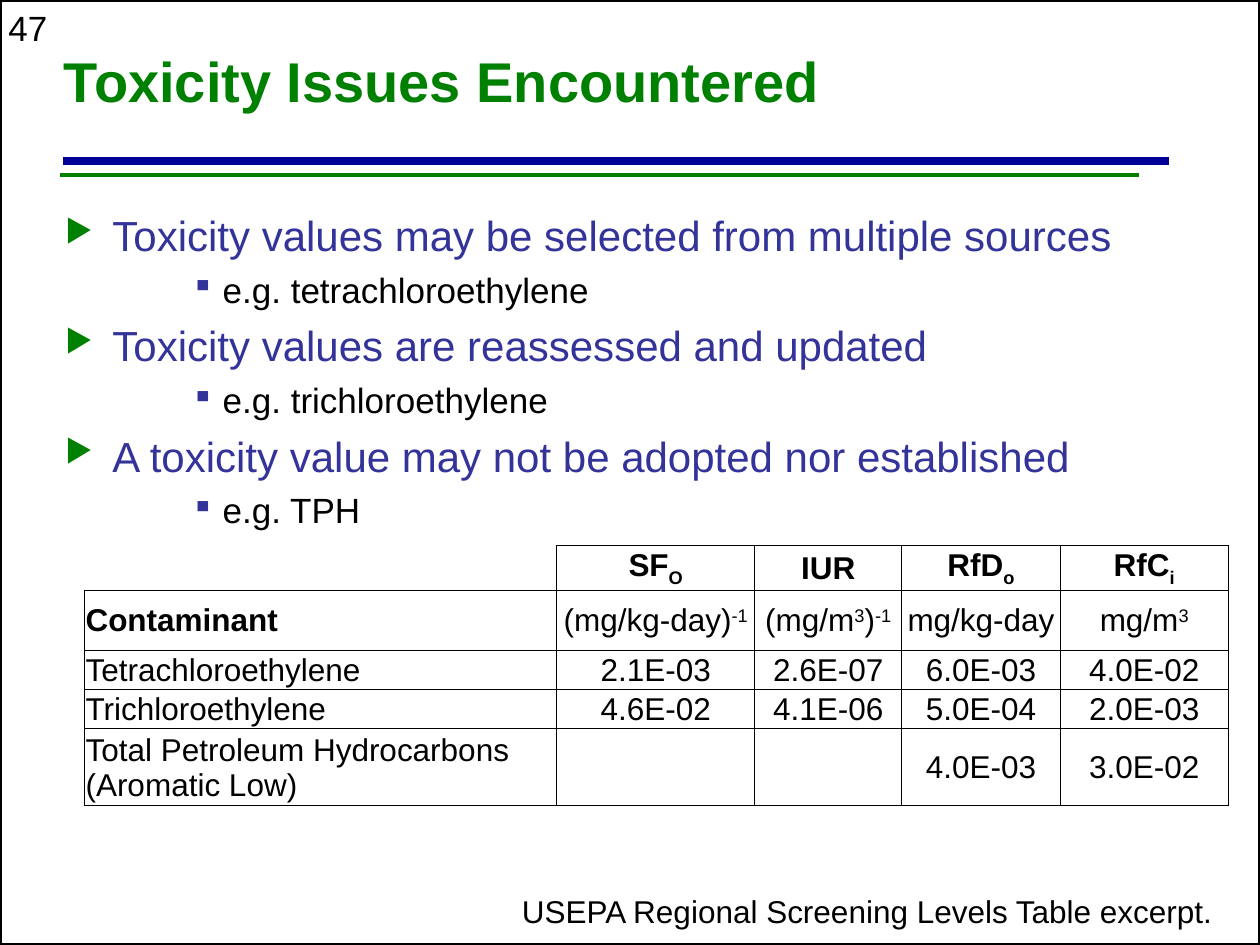
"""Build the slide on toxicity values, with its bullets and screening level table."""
from lxml.etree import SubElement
from pptx import Presentation
from pptx.dml.color import RGBColor
from pptx.enum.shapes import MSO_CONNECTOR as Connector, MSO_SHAPE as Shape
from pptx.enum.text import MSO_ANCHOR as Anchor, PP_ALIGN as Align
from pptx.oxml.ns import qn
from pptx.util import Pt

BLACK, GREEN, NAVY, INDIGO = "000000", "008000", "000099", "333399"
SUB, SUPER = -25, 30
RULES = [(36, 668, 92.2, NAVY, 4.5), (34.5, 651, 100, GREEN, 2)]
TOPICS = [
    ("Toxicity values may be selected from multiple sources", "e.g. tetrachloroethylene"),
    ("Toxicity values are reassessed and updated", "e.g. trichloroethylene"),
    ("A toxicity value may not be adopted nor established", "e.g. TPH"),
]
TOPIC_STYLE = dict(level=0, margin=27, hang=27, mark="▶", tint=GREEN, percent=75,
                   size=24, color=INDIGO, before=5.5)
EXAMPLE_STYLE = dict(level=2, margin=90, hang=18, mark="▪", tint=INDIGO, percent=90,
                     size=20, color=BLACK, before=4.7)
COLUMNS = [270, 113, 84.2, 90.5, 96]
ROWS = [22.3, 34.6, 22.3, 22.3, 43.9]
CELLS = [
    ["", [("SF", 0), ("O", SUB)], "IUR", [("RfD", 0), ("o", SUB)], [("RfC", 0), ("i", SUB)]],
    ["Contaminant", [("(mg/kg-day)", 0), ("-1", SUPER)],
     [("(mg/m", 0), ("3", SUPER), (")", 0), ("-1", SUPER)],
     "mg/kg-day", [("mg/m", 0), ("3", SUPER)]],
    ["Tetrachloroethylene", "2.1E-03", "2.6E-07", "6.0E-03", "4.0E-02"],
    ["Trichloroethylene", "4.6E-02", "4.1E-06", "5.0E-04", "2.0E-03"],
    ["Total Petroleum Hydrocarbons (Aromatic Low)", "", "", "4.0E-03", "3.0E-02"],
]


def rgb(value):
    return RGBColor.from_string(value)


def style(font, size, color=BLACK, bold=False):
    font.name, font.size, font.bold = "Arial", Pt(size), bold
    font.color.rgb = rgb(color)


def add_run(para, text, size, color=BLACK, bold=False, baseline=0):
    span = para.add_run()
    span.text = text
    style(span.font, size, color, bold)
    if baseline:
        span._r.get_or_add_rPr().set("baseline", str(baseline * 1000))


def add_box(page, left, top, width, height, wrap=True):
    frame = page.shapes.add_textbox(Pt(left), Pt(top), Pt(width), Pt(height)).text_frame
    frame.word_wrap = wrap
    return frame


def add_rule(page, left, right, y, color, weight):
    rule = page.shapes.add_connector(Connector.STRAIGHT, Pt(left), Pt(y), Pt(right), Pt(y))
    rule.line.color.rgb, rule.line.width = rgb(color), Pt(weight)
    SubElement(rule._element.spPr, qn("a:effectLst"))


def add_bullet(para, text, look, first):
    para.level = look["level"]
    para.space_before = Pt(0 if first else look["before"])
    props = para._p.get_or_add_pPr()
    props.set("marL", str(Pt(look["margin"])))
    props.set("indent", str(-Pt(look["hang"])))
    SubElement(SubElement(props, qn("a:buClr")), qn("a:srgbClr"), val=look["tint"])
    SubElement(props, qn("a:buSzPct"), val=str(look["percent"] * 1000))
    SubElement(props, qn("a:buChar"), char=look["mark"])
    add_run(para, text, look["size"], look["color"])


def add_borders(cell, visible):
    props = cell._tc.get_or_add_tcPr()
    for side in "LRTB":
        edge = SubElement(props, qn("a:ln" + side), w=str(Pt(0.5)))
        if side in visible:
            SubElement(SubElement(edge, qn("a:solidFill")), qn("a:srgbClr"), val=BLACK)
        else:
            SubElement(edge, qn("a:noFill"))


def fill_cell(cell, content, row, column):
    add_borders(cell, "RB" if row == column == 0 else "LRTB")
    cell.fill.background()
    cell.vertical_anchor = Anchor.MIDDLE
    cell.margin_left = cell.margin_right = cell.margin_top = Pt(0.72)
    cell.margin_bottom = 0
    para = cell.text_frame.paragraphs[0]
    para.alignment = Align.CENTER if column else Align.LEFT
    if not content:
        style(para.font, 18)
        return
    bold = row == 0 or (row, column) == (1, 0)
    for text, baseline in [(content, 0)] if isinstance(content, str) else content:
        add_run(para, text, 18, bold=bold, baseline=baseline)


def add_levels_table(page):
    table = page.shapes.add_table(len(ROWS), len(COLUMNS), Pt(48.2), Pt(311.8),
                                  Pt(sum(COLUMNS)), Pt(sum(ROWS))).table
    table.first_row = table.horz_banding = False
    for column, width in zip(table.columns, COLUMNS):
        column.width = Pt(width)
    for row, height in zip(table.rows, ROWS):
        row.height = Pt(height)
    for row, line in enumerate(CELLS):
        for column, content in enumerate(line):
            fill_cell(table.cell(row, column), content, row, column)


def main():
    deck = Presentation()
    deck.slide_width, deck.slide_height = Pt(720), Pt(540)
    page = deck.slides.add_slide(deck.slide_layouts[6])

    for rule in RULES:
        add_rule(page, *rule)
    number = add_box(page, -2.2, 0, 38.9, 31, wrap=False)
    add_run(number.paragraphs[0], "47", 20)
    border = page.shapes.add_shape(Shape.RECTANGLE, 0, 0, Pt(720), Pt(540))
    border.shadow.inherit = False
    border.fill.background()
    border.line.color.rgb, border.line.width = rgb(BLACK), Pt(2)

    title = add_box(page, 29.5, 7.2, 597.6, 82.8)
    title.vertical_anchor = Anchor.MIDDLE
    title.paragraphs[0].line_spacing = 0.85
    add_run(title.paragraphs[0], "Toxicity Issues Encountered", 32, GREEN, True)

    body = add_box(page, 30.2, 113.8, 660.2, 221.8)
    body.margin_top = Pt(6)
    lines = [pair for topic in TOPICS for pair in zip(topic, (TOPIC_STYLE, EXAMPLE_STYLE))]
    for index, (text, look) in enumerate(lines):
        para = body.add_paragraph() if index else body.paragraphs[0]
        add_bullet(para, text, look, index == 0)

    source = add_box(page, 287.3, 506.2, 417.6, 28.8, wrap=False)
    source.paragraphs[0].alignment = Align.RIGHT
    add_run(source.paragraphs[0], "USEPA Regional Screening Levels Table excerpt. ", 18)
    add_levels_table(page)
    deck.save("out.pptx")


if __name__ == "__main__":
    main()
